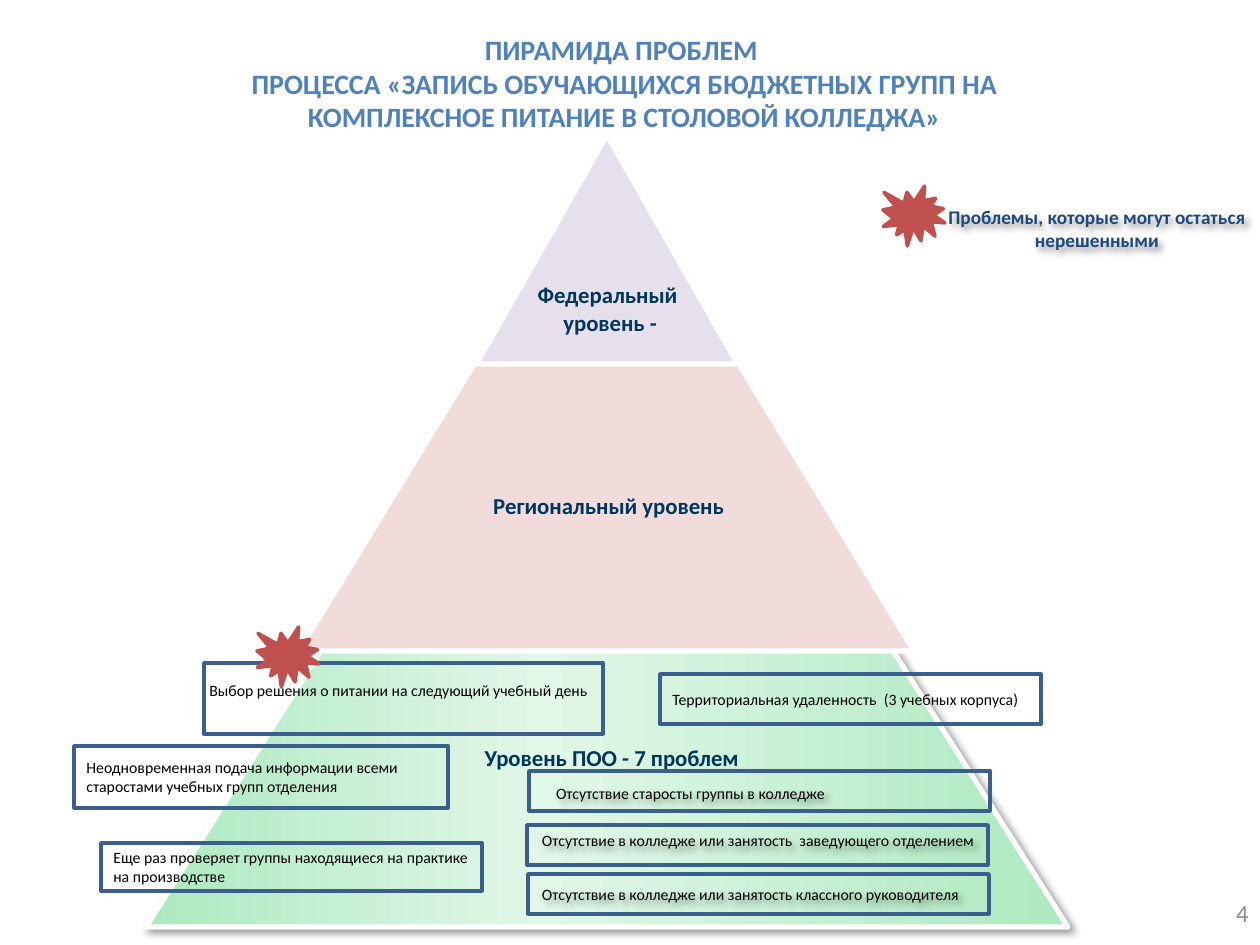
import pptx
import pptx.util
import pptx.dml.color
import pptx.enum.shapes
import pptx.enum.text
import pptx.oxml
from pptx.oxml.ns import nsdecls, qn

KIND = pptx.enum.shapes.MSO_SHAPE
ALIGN = pptx.enum.text.PP_ALIGN
ANCHOR = pptx.enum.text.MSO_ANCHOR
NAVY, BLUE, RED = "00355C", "3A5F8C", "C0504D"

# Content: places are left, top, width, height in px
TITLE = [["ПИРАМИДА ПРОБЛЕМ "],
         ["ПРОЦЕССА «ЗАПИСЬ ОБУЧАЮЩИХСЯ БЮДЖЕТНЫХ ГРУПП НА "
          "КОМПЛЕКСНОЕ ПИТАНИЕ В СТОЛОВОЙ КОЛЛЕДЖА»"]]
LEVELS = [
    ((200, 738, 823, 40), [["Уровень ПОО - ", "7 проблем"]]),
    ((344, 486, 534, 40), [["Региональный уровень "]]),
    ((464, 275, 287, 96), [["Федеральный"], [" уровень -"]]),
]
BOXES = [
    ((204, 663, 399, 71), None),
    ((529, 771, 461, 40), None),
    ((527, 825, 461, 40), None),
    ((528, 874, 461, 40), None),
    ((660, 674, 381, 50), "Территориальная удаленность  (3 учебных корпуса)"),
    ((74, 746, 374, 62), "Неодновременная подача информации всеми "
                         "старостами учебных групп отделения"),
    ((101, 843, 381, 48), "Еще раз проверяет группы находящиеся на практике "
                          "на производстве"),
]
LABELS = [
    ((546, 782, 383, 22), "Отсутствие старосты группы в колледже"),
    ((532, 805, 537, 70),
     "Отсутствие в колледже или занятость  заведующего отделением"),
    ((532, 876, 537, 36),
     "Отсутствие в колледже или занятость классного руководителя"),
]
CHOICE = ((197, 675, 406, 32),
          "Выбор решения о питании на следующий учебный день")
LEGEND = ((898, 194, 398, 59), "Проблемы, которые могут остаться нерешенными")
BURSTS = [(257, 627, 62, 60), (883, 186, 62, 60)]
STOPS = [(0, "ADE9C0"), (43, "E1F7E8"), (100, "ADE9C0")]


def px(n):
    return round(n * 914400 / 126)


def rgb(code):
    return pptx.dml.color.RGBColor.from_string(code)


def place(item, at):
    item.left, item.top, item.width, item.height = map(px, at)


def write(item, paras, size, color, bold=False, align=ALIGN.LEFT,
          anchor=ANCHOR.MIDDLE, inset=None, wrap=True):
    frame = item.text_frame
    frame.word_wrap = wrap
    frame.vertical_anchor = anchor
    if inset:
        (frame.margin_left, frame.margin_top,
         frame.margin_right, frame.margin_bottom) = map(px, inset)
    for i, runs in enumerate(paras):
        para = frame.add_paragraph() if i else frame.paragraphs[0]
        para.alignment = align
        for text in runs:
            run = para.add_run()
            run.text = text
            font = run.font
            font.name, font.size, font.bold = "Calibri", pptx.util.Pt(size), bold
            font.color.rgb = rgb(color)


def draw(kind, at, fill=None, line=None, width=2):
    item = slide.shapes.add_shape(kind, *map(px, at))
    item.shadow.inherit = False
    if fill:
        item.fill.solid()
        item.fill.fore_color.rgb = rgb(fill)
    else:
        item.fill.background()
    if line:
        item.line.color.rgb = rgb(line)
        item.line.width = pptx.util.Pt(width)
    else:
        item.line.fill.background()
    return item


def note(at, paras, size, color, **style):
    item = slide.shapes.add_textbox(*map(px, at))
    write(item, paras, size, color, **style)
    return item


def shade(item):
    item.shadow.inherit = False
    effects = item._element.spPr.find(qn("a:effectLst"))
    effects.append(pptx.oxml.parse_xml(
        f'<a:outerShdw {nsdecls("a")} blurRad="50800" dist="38100" dir="2700000" '
        'algn="tl" rotWithShape="0"><a:srgbClr val="000000">'
        '<a:alpha val="40000"/></a:srgbClr></a:outerShdw>'))


def blend(item, stops):
    item.fill.gradient()
    item.fill.gradient_angle = 0
    group = item._element.spPr.find(qn("a:gradFill")).find(qn("a:gsLst"))
    for stop in list(group):
        group.remove(stop)
    for pos, code in stops:
        group.append(pptx.oxml.parse_xml(
            f'<a:gs {nsdecls("a")} pos="{pos * 1000}">'
            f'<a:srgbClr val="{code}"/></a:gs>'))


# Slide and title
deck = pptx.Presentation()
deck.slide_width, deck.slide_height = px(1260), px(945)
slide = deck.slides.add_slide(deck.slide_layouts[5])
title = slide.shapes.title
place(title, (174, 25, 901, 116))
write(title, TITLE, 16, "4F81BD", bold=True, align=ALIGN.CENTER)

# Pyramid
base = draw(KIND.ISOSCELES_TRIANGLE, (146, 199, 922, 728), line="FFFFFF", width=3)
blend(base, STOPS)
shade(base)
draw(KIND.ISOSCELES_TRIANGLE, (319, 135, 576, 505), "E6E0EC", "FFFFFF", 3)
middle = draw(KIND.TRAPEZOID, (299, 364, 615, 287), "F2DCDB", "FFFFFF", 3)
middle.adjustments[0] = 0.61
for at, paras in LEVELS:
    note(at, paras, 13, NAVY, bold=True, align=ALIGN.CENTER, anchor=ANCHOR.TOP)

# Problems
for at, text in BOXES:
    box = draw(KIND.RECTANGLE, at, line=BLUE)
    if text:
        write(box, [[text]], 9, "000000")
for at, text in LABELS:
    label = draw(KIND.ROUNDED_RECTANGLE, at)
    label.adjustments[0] = 0
    write(label, [[text]], 9, "000000", inset=(10, 6, 10, 6))
    shade(label)
for at in BURSTS:
    draw(KIND.EXPLOSION1, at, RED, RED)
note(CHOICE[0], [[CHOICE[1]]], 9, "000000", anchor=ANCHOR.TOP, wrap=False)

# Legend and page number
legend = note(LEGEND[0], [[LEGEND[1]]], 11, "1F497D", bold=True,
              align=ALIGN.CENTER, inset=(13, 11, 13, 1))
shade(legend)
note((968, 888, 293, 50), [["4"]], 14, "8C8C8C", align=ALIGN.RIGHT)

deck.save("out.pptx")
